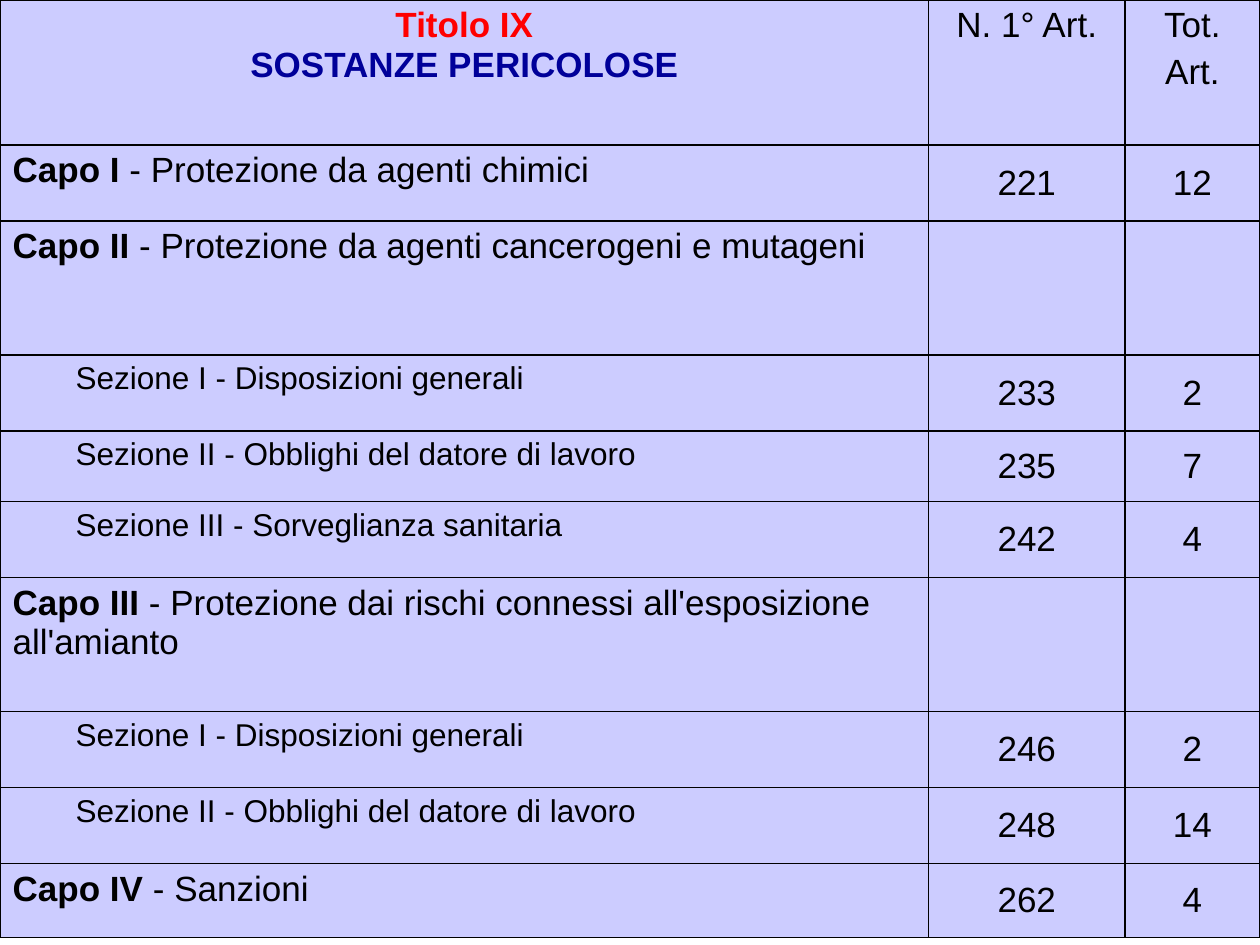
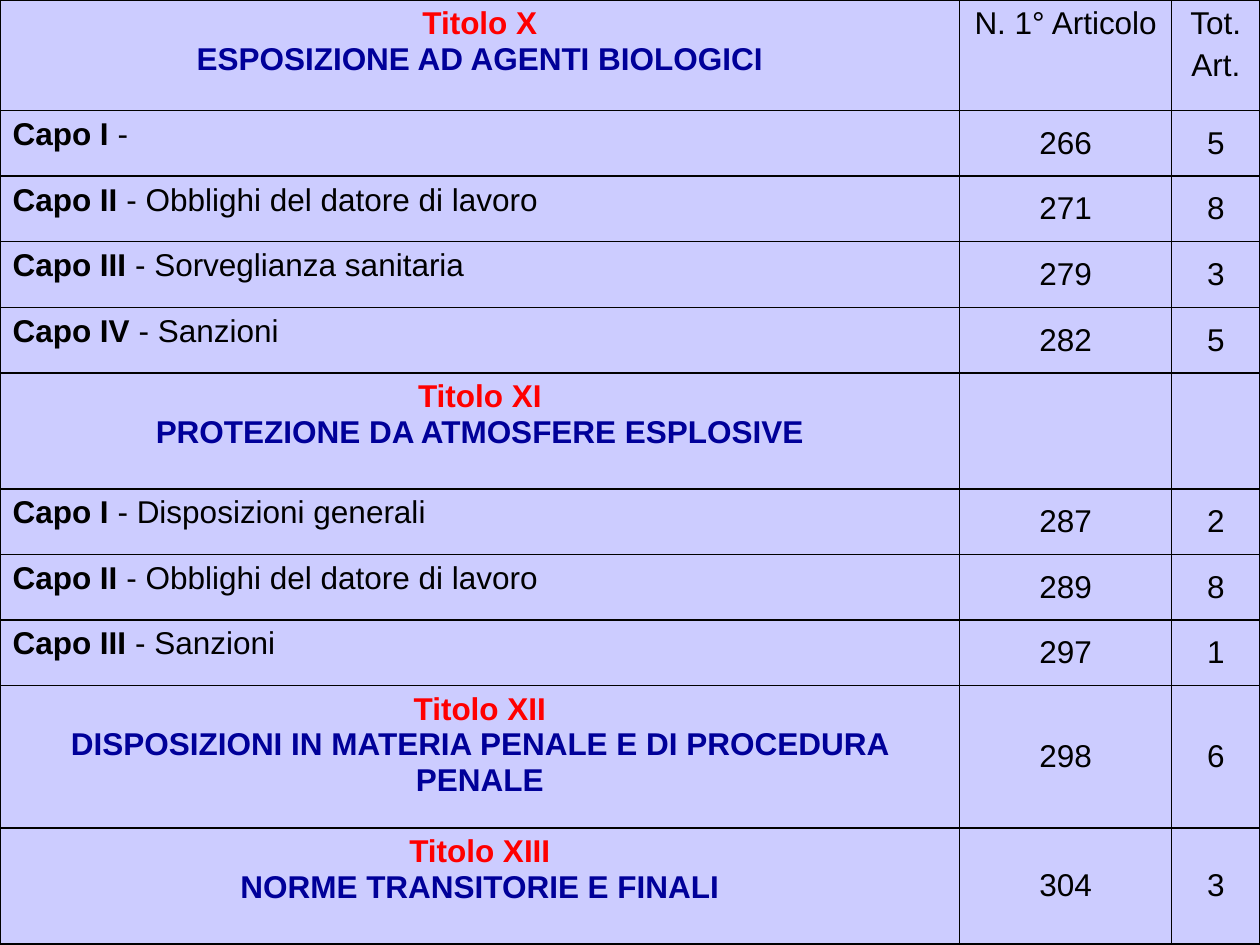
from lxml import etree
from pptx import Presentation
from pptx.dml.color import RGBColor
from pptx.enum.text import MSO_ANCHOR, PP_ALIGN
from pptx.oxml.ns import qn
from pptx.util import Pt

CENTER, LEFT = PP_ALIGN.CENTER, PP_ALIGN.LEFT
TOP, MIDDLE = MSO_ANCHOR.TOP, MSO_ANCHOR.MIDDLE

COLORS = {"cell": "CCCCFF", "border": "000000", "text": "000000",
          "number": "FF0000", "subject": "000099"}
FONT = "Arial"
SECTION_SIZE = 18
SECTION_MARGIN, SECTION_INDENT = 58.3, -22.3

TABLES = [
    {"size": 20, "cols": [530.6, 112.3, 77.1],
     "heads": ("N. 1° Art.", "Tot.\nArt."),
     "rows": [
         ("title", "Titolo IX", "SOSTANZE PERICOLOSE", None, None, 82.8),
         ("chapter", "Capo I", " - Protezione da agenti chimici", 221, 12, 43.4),
         ("chapter", "Capo II", " - Protezione da agenti cancerogeni e mutageni", None, None, 76.6),
         ("section", "Sezione I", " - Disposizioni generali", 233, 2, 43.4),
         ("section", "Sezione II", " - Obblighi del datore di lavoro", 235, 7, 40.5),
         ("section", "Sezione III", " - Sorveglianza sanitaria", 242, 4, 43.4),
         ("chapter", "Capo III", " - Protezione dai rischi connessi all'esposizione all'amianto", None, None, 76.6),
         ("section", "Sezione I", " - Disposizioni generali", 246, 2, 43.4),
         ("section", "Sezione II", " - Obblighi del datore di lavoro", 248, 14, 43.4),
         ("chapter", "Capo IV", " - Sanzioni", 262, 4, 42.3),
     ]},
    {"size": 18, "cols": [548.4, 121.2, 50.4],
     "heads": ("N. 1° Articolo", "Tot.\nArt."),
     "rows": [
         ("title", "Titolo X", "ESPOSIZIONE AD AGENTI BIOLOGICI", None, None, 63.2),
         ("chapter", "Capo I", " -", 266, 5, 37.5),
         ("chapter", "Capo II", " - Obblighi del datore di lavoro", 271, 8, 37.5),
         ("chapter", "Capo III", " - Sorveglianza sanitaria", 279, 3, 37.5),
         ("chapter", "Capo IV", " - Sanzioni", 282, 5, 37.5),
         ("title", "Titolo XI", "PROTEZIONE DA ATMOSFERE ESPLOSIVE", None, None, 66.3),
         ("chapter", "Capo I", " - Disposizioni generali", 287, 2, 37.5),
         ("chapter", "Capo II", " - Obblighi del datore di lavoro", 289, 8, 37.5),
         ("chapter", "Capo III", " - Sanzioni", 297, 1, 37.5),
         ("title", "Titolo XII", "DISPOSIZIONI IN MATERIA PENALE E DI PROCEDURA PENALE", 298, 6, 81.4),
         ("title", "Titolo XIII", "NORME TRANSITORIE E FINALI", 304, 3, 66.3),
     ]},
]


def add_run(p, text, size, color="text", bold=False):
    r = p.add_run()
    r.text = text
    r.font.name = FONT
    r.font.size = Pt(size)
    r.font.bold = bold
    r.font.color.rgb = RGBColor.from_string(COLORS[color])


def style_cell(cell):
    cell.fill.solid()
    cell.fill.fore_color.rgb = RGBColor.from_string(COLORS["cell"])
    tcPr = cell._tc.get_or_add_tcPr()
    for i, side in enumerate(("lnL", "lnR", "lnT", "lnB")):
        ln = etree.Element(qn("a:" + side), w=str(Pt(1)))
        fill = etree.SubElement(ln, qn("a:solidFill"))
        etree.SubElement(fill, qn("a:srgbClr"), val=COLORS["border"])
        tcPr.insert(i, ln)


def fill_subject(cell, kind, label, text, size):
    p = cell.text_frame.paragraphs[0]
    p.alignment = CENTER if kind == "title" else LEFT
    if kind == "title":
        add_run(p, label, size, "number", True)
        p.add_line_break()
        add_run(p, text, size, "subject", True)
    elif kind == "chapter":
        add_run(p, label, size, bold=True)
        add_run(p, text, size)
    else:
        p.level = 1
        pPr = p._p.get_or_add_pPr()
        pPr.set("marL", str(Pt(SECTION_MARGIN)))
        pPr.set("indent", str(Pt(SECTION_INDENT)))
        add_run(p, label + text, SECTION_SIZE)


def fill_centered(cell, text, size, anchor):
    cell.vertical_anchor = anchor
    tf = cell.text_frame
    for i, line in enumerate(text.split("\n")):
        p = tf.add_paragraph() if i else tf.paragraphs[0]
        p.alignment = CENTER
        if i:
            p.space_before = Pt(size * 0.2)
        add_run(p, line, size)


def add_index_slide(prs, data):
    rows, cols, size = data["rows"], data["cols"], data["size"]
    slide = prs.slides.add_slide(prs.slide_layouts[6])
    height = sum(row[-1] for row in rows)
    sp = slide.shapes.add_table(len(rows), len(cols), 0, 0, Pt(sum(cols)), Pt(height))
    table = sp.table
    table.first_row = table.horz_banding = False
    for col, width in zip(table.columns, cols):
        col.width = Pt(width)
    for i, (kind, label, text, first, total, row_height) in enumerate(rows):
        table.rows[i].height = Pt(row_height)
        for j in range(len(cols)):
            style_cell(table.cell(i, j))
        fill_subject(table.cell(i, 0), kind, label, text, size)
        values = (first, total) if i else data["heads"]
        for j, value in enumerate(values, 1):
            if value is not None:
                fill_centered(table.cell(i, j), str(value), size, MIDDLE if i else TOP)


def main():
    prs = Presentation()
    prs.slide_width, prs.slide_height = Pt(720), Pt(540)
    for data in TABLES:
        add_index_slide(prs, data)
    prs.save("out.pptx")


if __name__ == "__main__":
    main()
